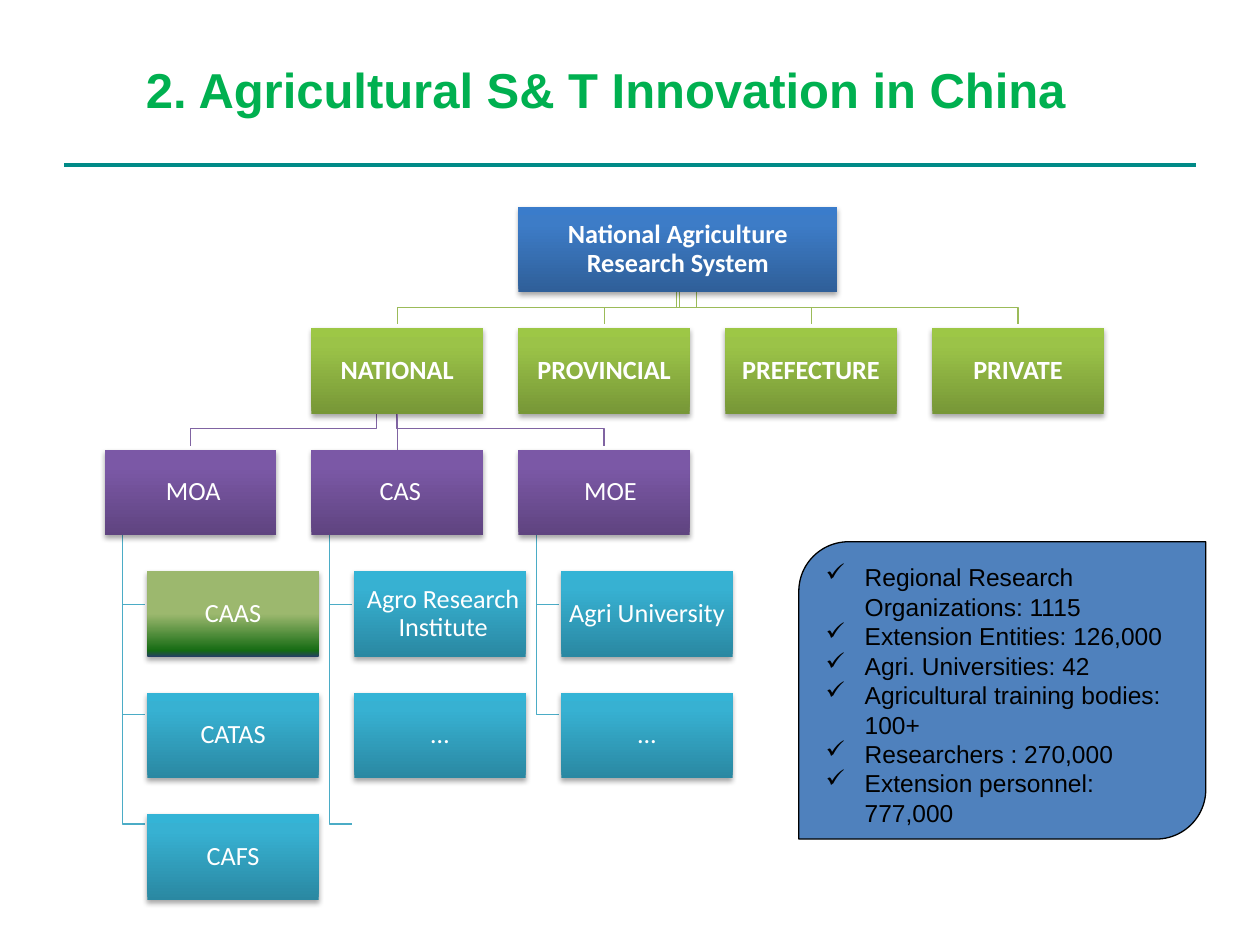
from lxml.etree import SubElement
from pptx import Presentation
from pptx.dml.color import RGBColor
from pptx.enum.shapes import MSO_CONNECTOR, MSO_SHAPE
from pptx.enum.text import MSO_ANCHOR, PP_ALIGN
from pptx.oxml.ns import qn
from pptx.util import Inches, Pt

WHITE = RGBColor(0xFF, 0xFF, 0xFF)
BLACK = RGBColor(0, 0, 0)
TITLE_GREEN = RGBColor(0x00, 0xB0, 0x50)
RULE_TEAL = RGBColor(0x00, 0x8A, 0x87)
PANEL_BLUE = RGBColor(0x4F, 0x81, 0xBD)
GREEN_LINE = RGBColor(0x9B, 0xBB, 0x59)
PURPLE_LINE = RGBColor(0x80, 0x64, 0xA2)
TEAL_LINE = RGBColor(0x4B, 0xAC, 0xC6)


def gradient(*stops):
    return [(pos, RGBColor.from_string(color)) for pos, color in stops]


BLUE = gradient((0, "2F5F99"), (80, "3D7CC7"), (100, "3A7CCB"))
GREEN = gradient((0, "779737"), (80, "9BC348"), (100, "9DC746"))
PURPLE = gradient((0, "5F4480"), (80, "7B58A6"), (100, "7C57A8"))
TEAL = gradient((0, "2A88A2"), (80, "37B1D2"), (100, "34B4D6"))
CAAS_GREEN = gradient((0, "254061"), (7, "156B13"), (50, "9CB86E"))

# Chart grid, in inches
LEFT, TOP = 0.83, 1.64
COL = (7.40 - LEFT) / 4
ROW = (6.46 - TOP) / 5
BOX_W, BOX_H = 1.36, 0.68
ROOT_W = 2.53
INDENT = 0.34
BUS_DROP, TIP_GAP = 0.12, 0.03
STEM, BRANCH_GAP = 0.14, 0.02
BRANCH_TOP, BRANCH_STEP = 4.8, 0.87

LEVEL_1 = ["NATIONAL", "PROVINCIAL", "PREFECTURE", "PRIVATE"]
LEVEL_1_STARTS = [5.37, 5.53, 5.39, 5.39]
# name, left pad, members (text, left pad, fill), branch positions
INSTITUTES = [
    ("MOA", 0.05, [("CAAS", 0, CAAS_GREEN), ("CATAS", 0, TEAL),
                   ("CAFS", 0, TEAL)], (0, 1, 2)),
    ("CAS", 0.05, [("Agro Research Institute", 0.05, TEAL),
                   ("…", 0, TEAL)], (0, 2)),
    ("MOE", 0.1, [("Agri University", 0, TEAL), ("...", 0, TEAL)], (0, 1)),
]
FIGURES = [
    "Regional Research Organizations: 1115",
    "Extension Entities: 126,000",
    "Agri. Universities: 42",
    "Agricultural training bodies: 100+",
    "Researchers : 270,000",
    "Extension personnel: 777,000",
]


def col_x(col):
    return LEFT + col * COL


def row_y(row):
    return TOP + row * ROW


def put_text(tf, lines, size, color, font="Calibri", bold=False,
             align=PP_ALIGN.LEFT, spacing=None, bullet=None):
    for i, line in enumerate(lines):
        p = tf.paragraphs[0] if i == 0 else tf.add_paragraph()
        p.alignment = align
        if spacing:
            p.line_spacing = spacing
        if bullet:
            pPr = p._p.get_or_add_pPr()
            pPr.set("marL", str(Inches(0.31)))
            pPr.set("indent", str(-Inches(0.31)))
            SubElement(pPr, qn("a:buChar")).set("char", bullet)
        r = p.add_run()
        r.text = line
        r.font.name, r.font.size, r.font.bold = font, Pt(size), bold
        r.font.color.rgb = color


def fill_gradient(sp, stops):
    """Fill upwards, from the first stop at the bottom edge."""
    sp.fill.gradient()
    sp.fill.gradient_angle = 90
    gs_list = sp._element.spPr.find(".//" + qn("a:gsLst"))
    for gs in list(gs_list):
        gs_list.remove(gs)
    for pos, color in stops:
        gs = SubElement(gs_list, qn("a:gs"), pos=str(pos * 1000))
        SubElement(gs, qn("a:srgbClr"), val=str(color))


def drop_shadow(sp):
    sp.shadow.inherit = False
    effects = sp._element.spPr.find(qn("a:effectLst"))
    shadow = SubElement(effects, qn("a:outerShdw"), blurRad=str(Pt(3.1)),
                        dist=str(Pt(1.8)), dir="5400000", rotWithShape="0")
    color = SubElement(shadow, qn("a:srgbClr"), val=str(BLACK))
    SubElement(color, qn("a:alpha"), val="35000")


def add_box(slide, text, col, row, stops, width=BOX_W, indent=0, pad=0,
            bold=False):
    sp = slide.shapes.add_shape(
        MSO_SHAPE.RECTANGLE, Inches(col_x(col) + indent), Inches(row_y(row)),
        Inches(width), Inches(BOX_H))
    fill_gradient(sp, stops)
    sp.line.fill.background()
    drop_shadow(sp)
    tf = sp.text_frame
    tf.word_wrap = True
    tf.vertical_anchor = MSO_ANCHOR.MIDDLE
    tf.margin_top = tf.margin_bottom = tf.margin_right = Inches(0.01)
    tf.margin_left = Inches(0.01 + pad)
    put_text(tf, [text], 15, WHITE, bold=bold, align=PP_ALIGN.CENTER,
             spacing=0.9)
    return sp


def add_path(slide, points, color):
    start, *rest = [(Inches(x), Inches(y)) for x, y in points]
    builder = slide.shapes.build_freeform(*start)
    builder.add_line_segments(rest, close=False)
    sp = builder.convert_to_shape()
    sp.fill.background()
    sp.line.color.rgb = color
    sp.line.width = Pt(0.75)
    sp.shadow.inherit = False


def add_elbow(slide, start_x, col, row, color):
    """Step from the level above down to the box at col, row."""
    start_y = row_y(row - 1) + BOX_H
    bus_y = start_y + BUS_DROP
    end_x = col_x(col) + BOX_W / 2
    add_path(slide, [(start_x, start_y), (start_x, bus_y), (end_x, bus_y),
                     (end_x, row_y(row) - TIP_GAP)], color)


def add_branch(slide, col, position):
    x = col_x(col) + STEM
    y = BRANCH_TOP + position * BRANCH_STEP
    add_path(slide, [(x, row_y(2) + BOX_H), (x, y),
                     (col_x(col) + INDENT - BRANCH_GAP, y)], TEAL_LINE)


def add_line(slide, x1, y1, x2, y2, color, width):
    line = slide.shapes.add_connector(
        MSO_CONNECTOR.STRAIGHT, Inches(x1), Inches(y1), Inches(x2), Inches(y2))
    line.line.color.rgb = color
    line.line.width = Pt(width)
    SubElement(line._element.spPr, qn("a:effectLst"))
    return line


def add_links(slide):
    for i, start_x in enumerate(LEVEL_1_STARTS):
        add_elbow(slide, start_x, i + 1, 1, GREEN_LINE)
    add_elbow(slide, 2.99, 0, 2, PURPLE_LINE)
    add_elbow(slide, 3.15, 2, 2, PURPLE_LINE)
    for col, (_, _, _, positions) in enumerate(INSTITUTES):
        for position in positions:
            add_branch(slide, col, position)


def add_boxes(slide):
    add_box(slide, "National Agriculture Research System", 2, 0, BLUE,
            width=ROOT_W, bold=True)
    level_1 = [add_box(slide, name, i + 1, 1, GREEN, bold=True)
               for i, name in enumerate(LEVEL_1)]
    level_2 = []
    for col, (name, pad, members, _) in enumerate(INSTITUTES):
        level_2.append(add_box(slide, name, col, 2, PURPLE, pad=pad))
        for i, (member, member_pad, stops) in enumerate(members):
            add_box(slide, member, col, i + 3, stops, indent=INDENT,
                    pad=member_pad)
    x = col_x(1) + BOX_W / 2
    link = add_line(slide, x, row_y(1) + BOX_H, x, row_y(2), PURPLE_LINE, 0.75)
    link.begin_connect(level_1[0], 2)
    link.end_connect(level_2[1], 0)


def add_figures_panel(slide):
    sp = slide.shapes.add_shape(MSO_SHAPE.ROUND_2_DIAG_RECTANGLE, Inches(6.34),
                                Inches(4.3), Inches(3.23), Inches(2.36))
    sp.fill.solid()
    sp.fill.fore_color.rgb = PANEL_BLUE
    sp.line.color.rgb = BLACK
    sp.line.width = Pt(0.75)
    sp.shadow.inherit = False
    tf = sp.text_frame
    tf.word_wrap = True
    tf.vertical_anchor = MSO_ANCHOR.TOP
    put_text(tf, FIGURES, 14, BLACK, font="Arial", bullet="✓")


def add_title(slide):
    box = slide.shapes.add_textbox(Inches(1.06), Inches(0.42), Inches(7.59),
                                   Inches(0.57))
    box.text_frame.word_wrap = False
    put_text(box.text_frame, ["2. Agricultural S& T Innovation in China"], 28,
             TITLE_GREEN, font="Arial", bold=True)


def main():
    prs = Presentation()
    prs.slide_width, prs.slide_height = Inches(10), Inches(7.5)
    slide = prs.slides.add_slide(prs.slide_layouts[6])
    add_line(slide, 0.51, 1.31, 9.49, 1.31, RULE_TEAL, 2.25)
    add_links(slide)
    add_boxes(slide)
    add_figures_panel(slide)
    add_title(slide)
    prs.save("out.pptx")


if __name__ == "__main__":
    main()
